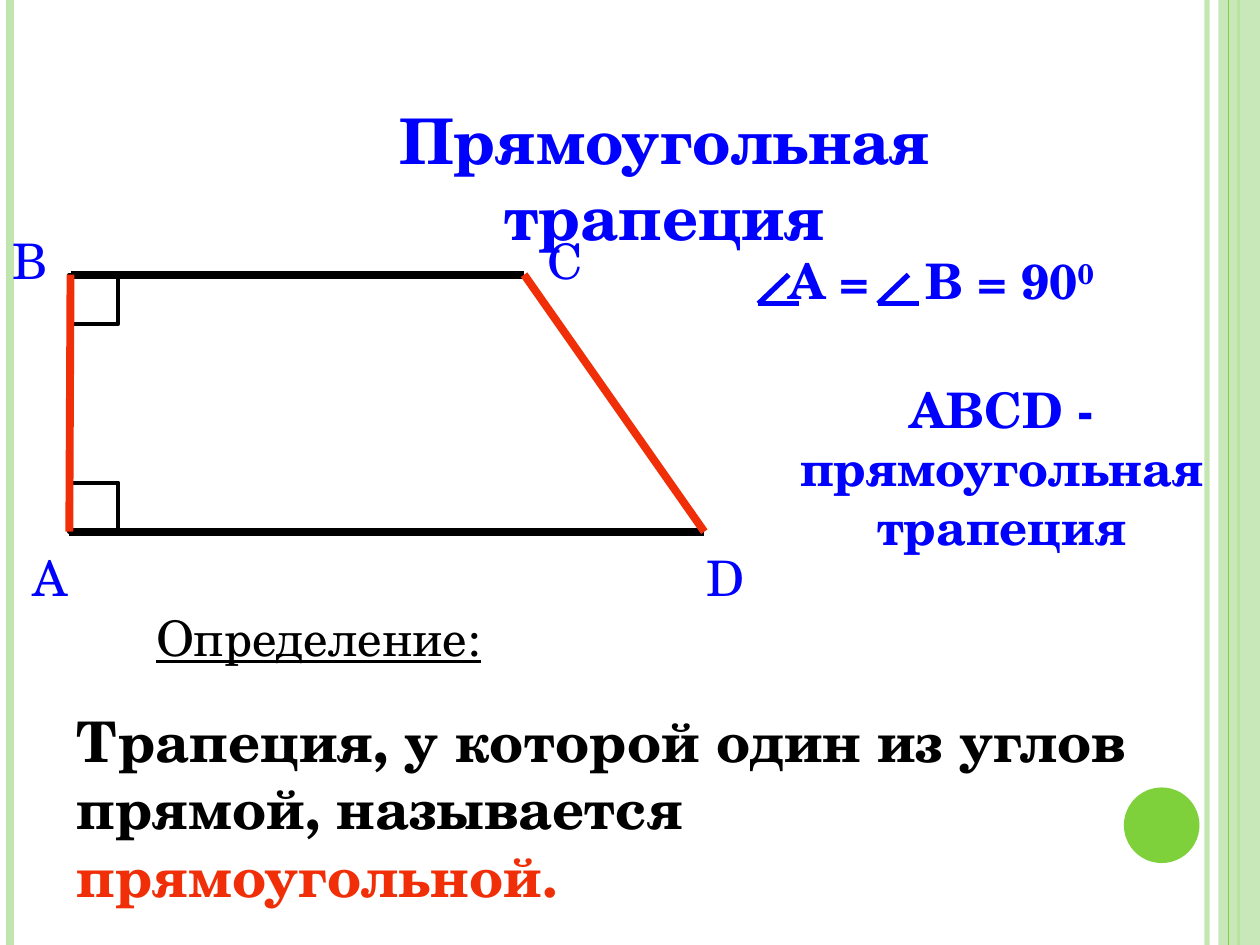
from dataclasses import dataclass

from lxml import etree
from pptx import Presentation
from pptx.dml.color import RGBColor
from pptx.enum.shapes import MSO_CONNECTOR, MSO_SHAPE
from pptx.enum.text import MSO_AUTO_SIZE, PP_ALIGN
from pptx.oxml.ns import qn
from pptx.util import Emu, Inches, Pt

STRAIGHT = MSO_CONNECTOR.STRAIGHT
RECTANGLE, OVAL = MSO_SHAPE.RECTANGLE, MSO_SHAPE.OVAL
LEFT, CENTER = PP_ALIGN.LEFT, PP_ALIGN.CENTER
GROW = MSO_AUTO_SIZE.SHAPE_TO_FIT_TEXT

WIDTH, HEIGHT = Inches(10), Inches(7.5)
COLUMNS, ROWS = 100, 75
FONT = "TeX Gyre Schola"
BLACK, BLUE, RED = "000000", "0000FF", "F02F08"
GREEN, PALE_GREEN = "7FD13B", "C0E5AF"

Point = tuple[float, float]


@dataclass
class Segment:
    start: Point
    end: Point
    color: str
    weight: float
    opacity: int = 100


@dataclass
class Span:
    text: str
    color: str | None = None
    raised: bool = False


@dataclass
class Label:
    left: float
    top: float
    width: float
    height: float
    spans: list[Span]
    color: str = BLUE
    size: int = 28
    bold: bool = False
    underline: bool = False
    align: PP_ALIGN = LEFT
    wrap: bool = True
    tab: float = 0


def across(columns: float) -> Emu:
    return Emu(round(WIDTH * columns / COLUMNS))


def down(rows: float) -> Emu:
    return Emu(round(HEIGHT * rows / ROWS))


def paint(target, color: str, opacity: int = 100) -> None:
    target.solid()
    target.fore_color.rgb = RGBColor.from_string(color)
    if opacity < 100:
        for node in target._xPr.iter(qn("a:srgbClr")):
            etree.SubElement(node, qn("a:alpha"), val=str(opacity * 1000))


def draw_segment(page, segment: Segment) -> None:
    (x1, y1), (x2, y2) = segment.start, segment.end
    line = page.shapes.add_connector(STRAIGHT, across(x1), down(y1), across(x2), down(y2))
    paint(line.line.fill, segment.color, segment.opacity)
    line.line.width = Pt(segment.weight)
    etree.SubElement(line._element.spPr, qn("a:effectLst"))


def draw_shape(page, kind, left: float, top: float, width: float, height: float):
    shape = page.shapes.add_shape(kind, across(left), down(top), across(width), down(height))
    shape.shadow.inherit = False
    return shape


def draw_filled(page, kind, left: float, top: float, width: float, height: float,
                color: str, opacity: int = 100) -> None:
    shape = draw_shape(page, kind, left, top, width, height)
    paint(shape.fill, color, opacity)
    shape.line.fill.background()


def draw_right_angle(page, left: float, top: float, side: float) -> None:
    shape = draw_shape(page, RECTANGLE, left, top, side, side)
    shape.fill.background()
    paint(shape.line.fill, BLACK)
    shape.line.width = Pt(2.25)


def draw_angle_sign(page, vertex: Point) -> None:
    x, y = vertex
    for end in ((x + 2.4, y - 2.3), (x + 3.2, y)):
        draw_segment(page, Segment(vertex, end, BLUE, 3))


def draw_label(page, label: Label) -> None:
    box = page.shapes.add_textbox(across(label.left), down(label.top),
                                  across(label.width), down(label.height))
    frame = box.text_frame
    frame.word_wrap = label.wrap
    frame.auto_size = GROW
    para = frame.paragraphs[0]
    para.alignment = label.align
    font = para.font
    font.name, font.size = FONT, Pt(label.size)
    font.bold, font.underline = label.bold, label.underline
    if label.tab:
        stops = etree.Element(qn("a:tabLst"))
        etree.SubElement(stops, qn("a:tab"), pos=str(across(label.tab)), algn="l")
        para._p.pPr.insert(0, stops)
    for span in label.spans:
        for index, piece in enumerate(span.text.split("\n")):
            if index:
                para.add_line_break()
            run = para.add_run()
            run.text = piece
            paint(run.font.fill, span.color or label.color)
            if span.raised:
                run.font._element.set("baseline", "30000")


def vertical_rule(column: float, color: str, weight: float, opacity: int = 100) -> Segment:
    return Segment((column, 0), (column, ROWS), color, weight, opacity)


def draw_background(page) -> None:
    for rule in (vertical_rule(95.8, PALE_GREEN, 3, 93),
                 vertical_rule(0.8, PALE_GREEN, 4.5),
                 vertical_rule(98.3, GREEN, 1.5)):
        draw_segment(page, rule)
    draw_filled(page, RECTANGLE, 96.7, 0, 3.3, ROWS, PALE_GREEN, 87)
    draw_segment(page, vertical_rule(97.5, GREEN, 0.75))
    draw_filled(page, OVAL, 89.2, 62.5, 6, 6, GREEN)


def draw_trapezoid(page) -> None:
    a, b, c, d = (5.5, 42.2), (5.6, 21.8), (41.6, 21.8), (55.9, 42.2)
    side = 3.9
    for top in (a[1] - side, b[1]):
        draw_right_angle(page, a[0], top, side)
    for start, end, color in ((b, c, BLACK), (a, d, BLACK), (b, a, RED), (c, d, RED)):
        draw_segment(page, Segment(start, end, color, 4.5))
    for name, left, top in (("A", 1.6, 43), ("B", 0, 17.8), ("C", 42.5, 17.8), ("D", 55.1, 43)):
        draw_label(page, Label(left, top, 4.8, 5.7, [Span(name)], wrap=False))


def main() -> None:
    deck = Presentation()
    deck.slide_width, deck.slide_height = WIDTH, HEIGHT
    page = deck.slides.add_slide(deck.slide_layouts[6])
    draw_background(page)
    labels = [
        Label(16.9, 7.6, 71.7, 13, [Span("Прямоугольная\nтрапеция")],
              size=36, bold=True, align=CENTER),
        Label(11.4, 47.7, 45, 5.7, [Span("Определение:")], color=BLACK, underline=True),
        Label(5.1, 55.6, 88.2, 17,
              [Span("Трапеция, у которой один из углов прямой, называется "),
               Span("прямоугольной.", RED)], color=BLACK, size=32, bold=True),
        Label(59, 29.6, 41, 15, [Span("ABCD - прямоугольная трапеция")],
              bold=True, align=CENTER),
        Label(61.6, 19.4, 33, 5.7, [Span("A =\tВ = 90"), Span("0", raised=True)],
              bold=True, tab=10.9),
    ]
    draw_trapezoid(page)
    for label in labels:
        draw_label(page, label)
    for column in (60.2, 69.7):
        draw_angle_sign(page, (column, 24.1))
    deck.save("out.pptx")


if __name__ == "__main__":
    main()
